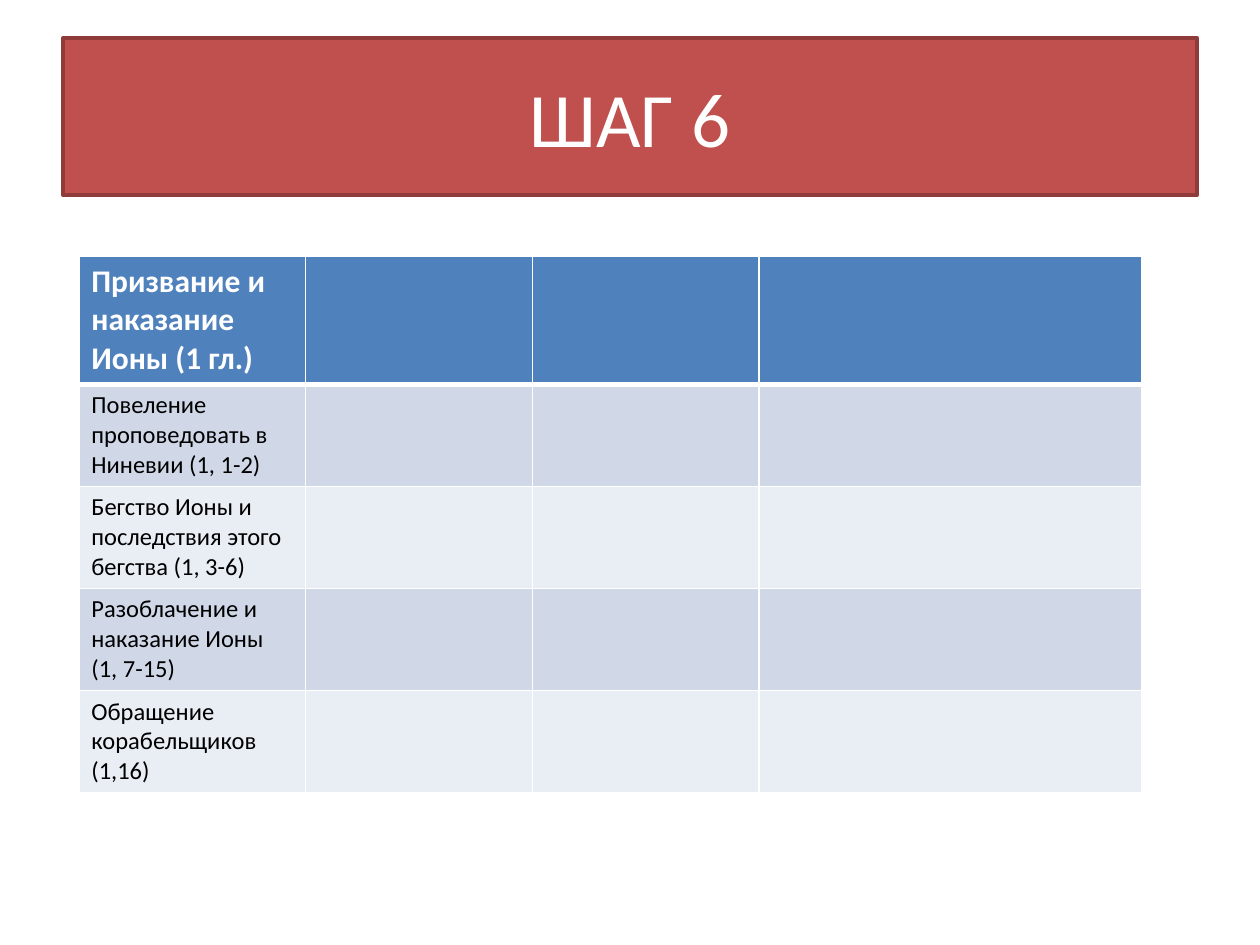
import pptx
import pptx.util
import pptx.dml.color
import pptx.enum.text
import pptx.oxml.ns
from dataclasses import dataclass
from lxml import etree

Pt = pptx.util.Pt
RGB = pptx.dml.color.RGBColor.from_string
qn = pptx.oxml.ns.qn


@dataclass(frozen=True)
class Theme:
    font: str = "Calibri"
    white: str = "FFFFFF"
    black: str = "000000"
    banner: str = "C0504D"
    banner_line: str = "8E3B39"
    header: str = "4F81BD"
    bands: tuple = ("D0D8E8", "E9EDF4")
    title_size: int = 44
    header_size: int = 18
    body_size: int = 14


THEME = Theme()
HEADING = "Призвание и наказание Ионы (1 гл.)"
EPISODES = [
    "Повеление проповедовать в Ниневии (1, 1-2)",
    "Бегство Ионы и последствия этого бегства (1, 3-6)",
    "Разоблачение и наказание Ионы (1, 7-15)",
    "Обращение корабельщиков (1,16)",
]


def write(tf, text, size, color, bold=False):
    r = tf.paragraphs[0].add_run()
    r.text = text
    formats = {"name": THEME.font, "size": Pt(size), "bold": bold}
    for name, value in formats.items():
        setattr(r.font, name, value)
    r.font.color.rgb = RGB(color)


def set_borders(cell, color, widths):
    """Draw the left, right, top and bottom cell borders."""
    tc_pr = cell._tc.get_or_add_tcPr()
    for side, width in zip("LRTB", widths):
        ln = etree.SubElement(tc_pr, qn(f"a:ln{side}"), w=str(Pt(width)))
        fill = etree.SubElement(ln, qn("a:solidFill"))
        etree.SubElement(fill, qn("a:srgbClr"), val=color)


def add_banner(s, box, text):
    sp = s.shapes.title
    for name, value in zip(("left", "top", "width", "height"), box):
        setattr(sp, name, Pt(value))
    sp.fill.solid()
    sp.fill.fore_color.rgb = RGB(THEME.banner)
    sp.line.color.rgb = RGB(THEME.banner_line)
    sp.line.width = Pt(2)
    tf = sp.text_frame
    formats = {"word_wrap": True,
               "auto_size": pptx.enum.text.MSO_AUTO_SIZE.NONE,
               "vertical_anchor": pptx.enum.text.MSO_ANCHOR.MIDDLE}
    for name, value in formats.items():
        setattr(tf, name, value)
    tf.paragraphs[0].alignment = pptx.enum.text.PP_ALIGN.CENTER
    write(tf, text, THEME.title_size, THEME.white)


def add_episode_table(s, box, heading, episodes):
    left, top, width, height = box
    narrow, header_height = 129.6, 72
    columns = [narrow] * 3 + [width - 3 * narrow]
    row_height = (height - header_height) / len(episodes)
    table = s.shapes.add_table(len(episodes) + 1, len(columns),
                               *map(Pt, box)).table
    for column, size in zip(table.columns, columns):
        column.width = Pt(size)

    for i, (row, text) in enumerate(zip(table.rows, [heading] + episodes)):
        is_header = i == 0
        row.height = Pt(header_height if is_header else row_height)
        fill = THEME.header if is_header else THEME.bands[(i - 1) % 2]
        # A heavier rule separates the header from the body
        widths = (1, 1, 3 if i == 1 else 1, 3 if is_header else 1)
        for cell in row.cells:
            set_borders(cell, THEME.white, widths)
            cell.fill.solid()
            cell.fill.fore_color.rgb = RGB(fill)
        # Only the first column is filled in
        if is_header:
            style = (THEME.header_size, THEME.white, True)
        else:
            style = (THEME.body_size, THEME.black)
        write(row.cells[0].text_frame, text, *style)


def main():
    prs = pptx.Presentation()
    prs.slide_width, prs.slide_height = Pt(720), Pt(540)
    s = prs.slides.add_slide(prs.slide_layouts[5])
    add_banner(s, (36, 21.6, 648, 90), "ШАГ 6")
    add_episode_table(s, (45, 146.4, 607.5, 304), HEADING, EPISODES)
    prs.save("out.pptx")


if __name__ == "__main__":
    main()
